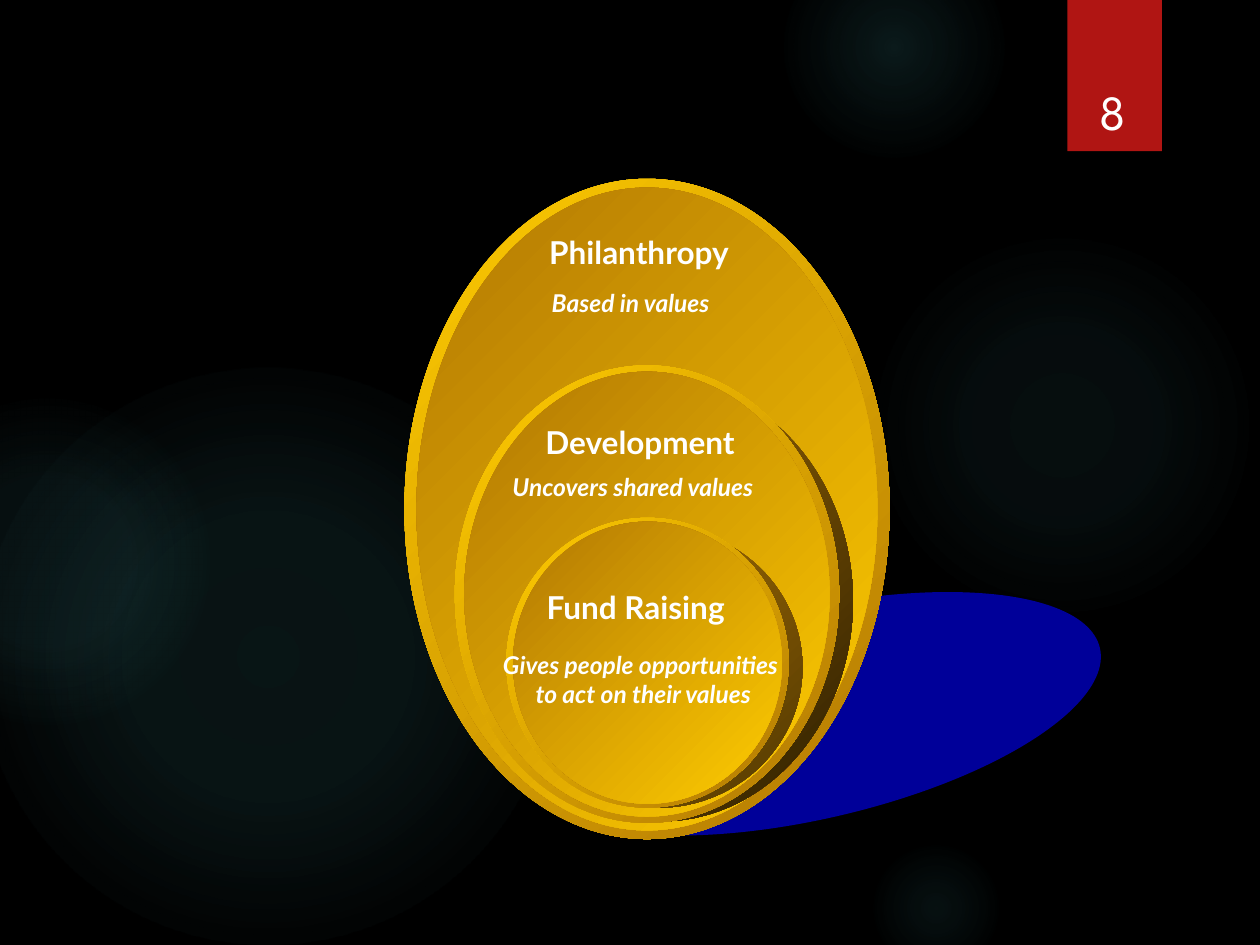
from pptx import Presentation
from pptx.dml.color import RGBColor
from pptx.enum.shapes import MSO_SHAPE
from pptx.enum.text import MSO_ANCHOR, MSO_AUTO_SIZE, PP_ALIGN
from pptx.oxml import parse_xml
from pptx.oxml.ns import nsdecls, qn
from pptx.util import Pt

OVAL, RECT = MSO_SHAPE.OVAL, MSO_SHAPE.RECTANGLE
BOTTOM, CENTER, LEFT = MSO_ANCHOR.BOTTOM, PP_ALIGN.CENTER, PP_ALIGN.LEFT
FIT_SHAPE = MSO_AUTO_SIZE.SHAPE_TO_FIT_TEXT
WHITE, GOLD, BRONZE, TEAL = "FFFFFF", "FFCC00", "B27804", "50B9C1"
DIAGONAL = '<a:lin ang="2700000" scaled="0"/>'
RADIAL = ('<a:path path="circle"><a:fillToRect l="50000" t="50000" '
          'r="50000" b="50000"/></a:path>')

GLOWS = [
    ((496, 132, 222, 222), [(0, 7), (36, 6), (69, 0)]),
    ((448, -36, 126, 126), [(0, 14), (36, 7), (73, 0)]),
    ((496, 480, 78, 78), [(0, 9), (36, 5), (66, 0)]),
    ((-12, 210, 330, 330), [(0, 11), (36, 10), (75, 0)]),
    ((-66, 228, 186, 186), [(0, 8), (36, 8), (72, 0)]),
]
EGGS = [
    {"box": (231.1, 102.2, 277.2, 377.3), "bevel": (6.9, 5),
     "title": ("Philanthropy", (75.7, 27.4, 124.6, 28.8)),
     "note": ("Based in values", (77.1, 59.1, 119.5, 23.8))},
    {"box": (259.9, 208.8, 219.6, 261.4), "bevel": (5.4, 3.6),
     "title": ("Development", (44.7, 29.5, 127.4, 28.8)),
     "note": ("Uncovers shared values", (25.9, 57.6, 175, 23.8)),
     "shade": ((7.9, 8.6, 219.6, 252), "2B1D01")},
    {"box": (289.4, 295.9, 161.3, 165.6), "bevel": (3.8, 2.2),
     "title": ("Fund Raising", (15.9, 36.7, 128.2, 28.8)),
     "note": ("Gives people opportunities \nto act on their values",
              (-20.8, 72, 198, 41)),
     "note_align": CENTER,
     "shade": ((3.6, 5.1, 165.6, 160.6), "523802")},
]


def rgb(value):
    """Turn a hex string into a colour."""
    return RGBColor.from_string(value)


def within(box, part):
    """Move a part, given relative to a box, to slide coordinates."""
    return (box[0] + part[0], box[1] + part[1], *part[2:])


def add_shape(shapes, kind, box, color=None):
    """Add a shape without line or shadow, with a solid fill if given."""
    s = shapes.add_shape(kind, *map(Pt, box))
    s.shadow.inherit = False
    s.line.fill.background()
    if color:
        s.fill.solid()
        s.fill.fore_color.rgb = rgb(color)
    else:
        s.fill.background()
    return s


def add_gradient_oval(shapes, box, stops, direction=DIAGONAL):
    """Add an oval with gradient stops of position, colour and opacity."""
    s = add_shape(shapes, OVAL, box)
    marks = "".join(
        f'<a:gs pos="{pos * 1000}"><a:srgbClr val="{color}">'
        f'<a:alpha val="{alpha * 1000}"/></a:srgbClr></a:gs>'
        for pos, color, alpha in stops)
    props = s.element.spPr
    props.replace(props.find(qn("a:noFill")), parse_xml(
        f'<a:gradFill {nsdecls("a")} rotWithShape="1">'
        f'<a:gsLst>{marks}</a:gsLst>{direction}</a:gradFill>'))
    return s


def add_two_tone(shapes, box, start, end):
    """Add an oval that blends diagonally between two colours."""
    return add_gradient_oval(shapes, box, [(0, start, 100), (100, end, 100)])


def add_text(slide, box, text, size, font="Lato", align=LEFT, bold=None, italic=None):
    """Add white text in a box and return its text frame."""
    tf = slide.shapes.add_textbox(*map(Pt, box)).text_frame
    tf.text = text
    tf.word_wrap = False
    for p in tf.paragraphs:
        p.alignment = align
        for r in p.runs:
            r.font.name, r.font.size = font, Pt(size)
            r.font.bold, r.font.italic = bold, italic
            r.font.color.rgb = rgb(WHITE)
    return tf


def build_background(slide):
    """Paint the black backdrop and its soft glows."""
    slide.background.fill.solid()
    slide.background.fill.fore_color.rgb = rgb("000000")
    for box, fades in GLOWS:
        stops = [(pos, TEAL, alpha) for pos, alpha in fades]
        add_gradient_oval(slide.shapes, box, stops, RADIAL)


def build_page_tab(slide, box):
    """Draw the red tab with the page number."""
    s = add_shape(slide.shapes, RECT, box, "B01513")
    s.element.spPr.find(qn("a:effectLst")).append(parse_xml(
        f'<a:outerShdw {nsdecls("a")} blurRad="{Pt(3)}" dist="{Pt(2)}" '
        'dir="5400000" rotWithShape="0"><a:srgbClr val="000000">'
        '<a:alpha val="45000"/></a:srgbClr></a:outerShdw>'))
    tf = add_text(slide, within(box, (1.3, 23, 49.7, 60.5)), "8", 28,
                  "League Spartan", CENTER)
    tf.word_wrap = True
    tf.vertical_anchor = BOTTOM


def build_egg(slide, box, bevel, title, note, note_align=LEFT, shade=None):
    """Draw one bevelled golden egg with its shade, title and note."""
    if shade:
        add_two_tone(slide.shapes, within(box, shade[0]), BRONZE, shade[1])
    dx, dy = bevel
    face = (dx, dy, box[2] - 2 * dx, box[3] - 2 * dy)
    group = slide.shapes.add_group_shape()
    add_two_tone(group.shapes, box, GOLD, BRONZE)
    add_two_tone(group.shapes, within(box, face), BRONZE, GOLD)
    for (text, part), size, align, italic in ((title, 18, LEFT, None),
                                              (note, 14, note_align, True)):
        tf = add_text(slide, within(box, part), text, size, align=align,
                      bold=True, italic=italic)
        tf.auto_size = FIT_SHAPE


def main():
    """Build the slide and save it."""
    prs = Presentation()
    prs.slide_width, prs.slide_height = Pt(720), Pt(540)
    slide = prs.slides.add_slide(prs.slide_layouts[6])
    build_background(slide)
    build_page_tab(slide, (610, 0, 54, 86.4))
    ground = add_shape(slide.shapes, OVAL, (296.6, 347.8, 336.2, 120.2), "000099")
    ground.rotation = 347.1
    for egg in EGGS:
        build_egg(slide, **egg)
    prs.save("out.pptx")


if __name__ == "__main__":
    main()
